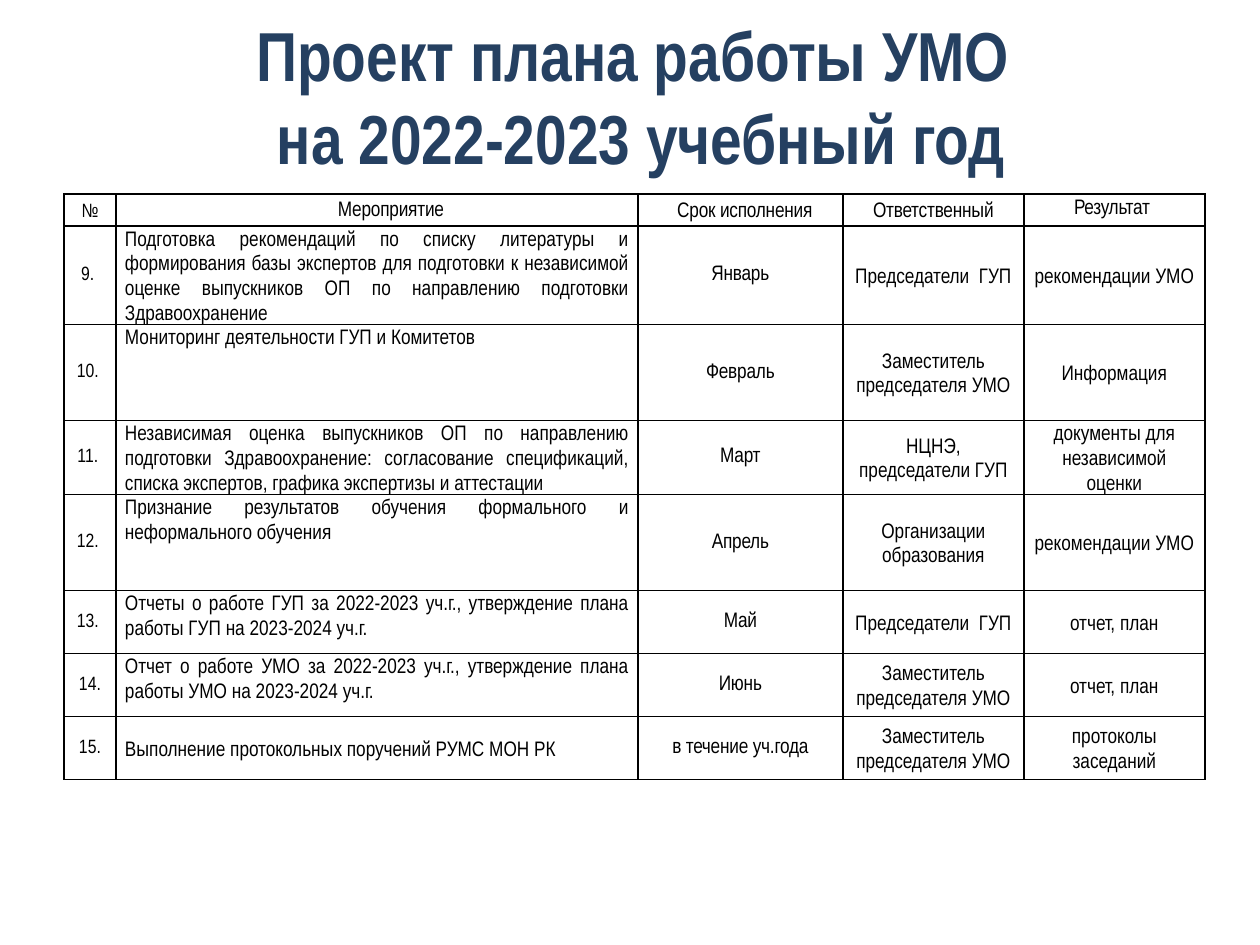
from dataclasses import dataclass

from lxml.etree import SubElement
from pptx import Presentation
from pptx.dml.color import RGBColor
from pptx.enum.text import MSO_ANCHOR, MSO_AUTO_SIZE, PP_ALIGN
from pptx.oxml.ns import qn
from pptx.util import Pt

TITLE = ["Проект плана работы УМО ", "на 2022-2023 учебный год"]
HEADER = ["№", "Мероприятие", "Срок исполнения", "Ответственный", "Результат "]
DEPUTY = "Заместитель председателя УМО"
CHAIRS = "Председатели  ГУП"
PLAN = [
    ["9. ", "Подготовка рекомендаций по списку литературы и формирования базы экспертов "
     "для подготовки к независимой оценке выпускников ОП по направлению подготовки "
     "Здравоохранение", "Январь", CHAIRS, "рекомендации УМО"],
    ["10. ", "Мониторинг деятельности ГУП и Комитетов", "Февраль", DEPUTY, "Информация"],
    ["11. ", "Независимая оценка выпускников ОП по направлению подготовки "
     "Здравоохранение: согласование спецификаций, списка экспертов, графика экспертизы "
     "и аттестации", "Март", "НЦНЭ, председатели ГУП", "документы для независимой оценки"],
    ["12. ", "Признание результатов обучения формального и неформального обучения",
     "Апрель", "Организации образования", "рекомендации УМО"],
    ["13. ", "Отчеты о работе ГУП за 2022-2023 уч.г., утверждение плана работы ГУП "
     "на 2023-2024 уч.г.", "Май", CHAIRS, "отчет, план"],
    ["14.", "Отчет о работе УМО за 2022-2023 уч.г., утверждение плана работы УМО "
     "на 2023-2024 уч.г. ", "Июнь", DEPUTY, "отчет, план"],
    ["15.", "Выполнение протокольных поручений РУМС МОН РК", "в течение уч.года",
     DEPUTY, "протоколы заседаний"],
]
TOP_CELLS = {(0, 4), (2, 1), (4, 1), (5, 1), (6, 1)}  # (row, column)

TITLE_BOX = (74, 16, 1134, 158)
TABLE_AT = (64, 194)
COLUMNS = [52, 522, 205, 181, 181]
ROWS = [32, 96, 96, 63, 96, 63, 63, 63]


@dataclass(frozen=True)
class Theme:
    font: str = "Arial Narrow"
    navy: RGBColor = RGBColor(0x25, 0x40, 0x61)
    black: RGBColor = RGBColor(0, 0, 0)
    title: float = 39.6
    body: float = 12
    number: float = 11
    border: float = 1


@dataclass(frozen=True)
class CellStyle:
    size: float = Theme.body
    align: PP_ALIGN = PP_ALIGN.CENTER
    spacing: object = 1.25
    tracking: int = 0  # hundredths of a point
    indent: int = 0
    inset: int = 9


T = Theme()
HEADER_STYLES = [
    CellStyle(size=T.number, tracking=-10, inset=8),
    CellStyle(spacing=1.15, tracking=-10, indent=28, inset=8),
    CellStyle(tracking=-10, indent=9, inset=8),
    CellStyle(tracking=-10, inset=8),
    CellStyle(tracking=-10, inset=8),
]
PLAN_STYLES = [
    CellStyle(size=T.number, spacing=1.0, inset=8),
    CellStyle(align=PP_ALIGN.JUSTIFY),
    CellStyle(spacing=Pt(11.1), tracking=-10),
    CellStyle(),
    CellStyle(),
]


def px(n):
    return round(n * 914400 / 126)


def add_run(p, text, size, color, bold=False):
    r = p.add_run()
    r.text = text
    r.font.name, r.font.size, r.font.bold = T.font, Pt(size), bold
    r.font.color.rgb = color
    return r


def add_borders(cell):
    tcPr = cell._tc.get_or_add_tcPr()
    for i, side in enumerate(("lnL", "lnR", "lnT", "lnB")):
        ln = SubElement(tcPr, qn(f"a:{side}"), w=str(Pt(T.border)))
        SubElement(SubElement(ln, qn("a:solidFill")), qn("a:srgbClr"), val=str(T.black))
        tcPr.insert(i, ln)  # borders come before the fill


def fill_cell(cell, text, style, anchor):
    cell.fill.background()
    add_borders(cell)
    cell.margin_left = cell.margin_right = px(style.inset)
    cell.margin_top = cell.margin_bottom = 0
    cell.vertical_anchor = anchor
    p = cell.text_frame.paragraphs[0]
    p.alignment, p.line_spacing = style.align, style.spacing
    if style.indent:
        p._p.get_or_add_pPr().set("indent", str(px(style.indent)))
    r = add_run(p, text, style.size, T.black)
    r.font._element.set("spc", str(style.tracking))


def add_title(s):
    sp = s.shapes.title
    sp.left, sp.top, sp.width, sp.height = map(px, TITLE_BOX)
    tf = sp.text_frame
    tf.auto_size, tf.vertical_anchor = MSO_AUTO_SIZE.NONE, MSO_ANCHOR.MIDDLE
    p = tf.paragraphs[0]
    p.alignment, p.line_spacing = PP_ALIGN.CENTER, 1.0
    for i, line in enumerate(TITLE):
        if i:
            p.add_line_break()
        add_run(p, line, T.title, T.navy, bold=True)


def add_plan(s):
    size = map(px, (*TABLE_AT, sum(COLUMNS), sum(ROWS)))
    table = s.shapes.add_table(len(ROWS), len(COLUMNS), *size).table
    table.first_row = table.horz_banding = False
    for column, width in zip(table.columns, COLUMNS):
        column.width = px(width)
    for row, height in zip(table.rows, ROWS):
        row.height = px(height)
    for i, texts in enumerate([HEADER, *PLAN]):
        styles = PLAN_STYLES if i else HEADER_STYLES
        for j, (text, style) in enumerate(zip(texts, styles)):
            anchor = MSO_ANCHOR.TOP if (i, j) in TOP_CELLS else MSO_ANCHOR.MIDDLE
            fill_cell(table.cell(i, j), text, style, anchor)


def main():
    prs = Presentation()
    prs.slide_width, prs.slide_height = px(1260), px(945)
    s = prs.slides.add_slide(prs.slide_layouts[5])
    add_title(s)
    add_plan(s)
    prs.save("out.pptx")


if __name__ == "__main__":
    main()
